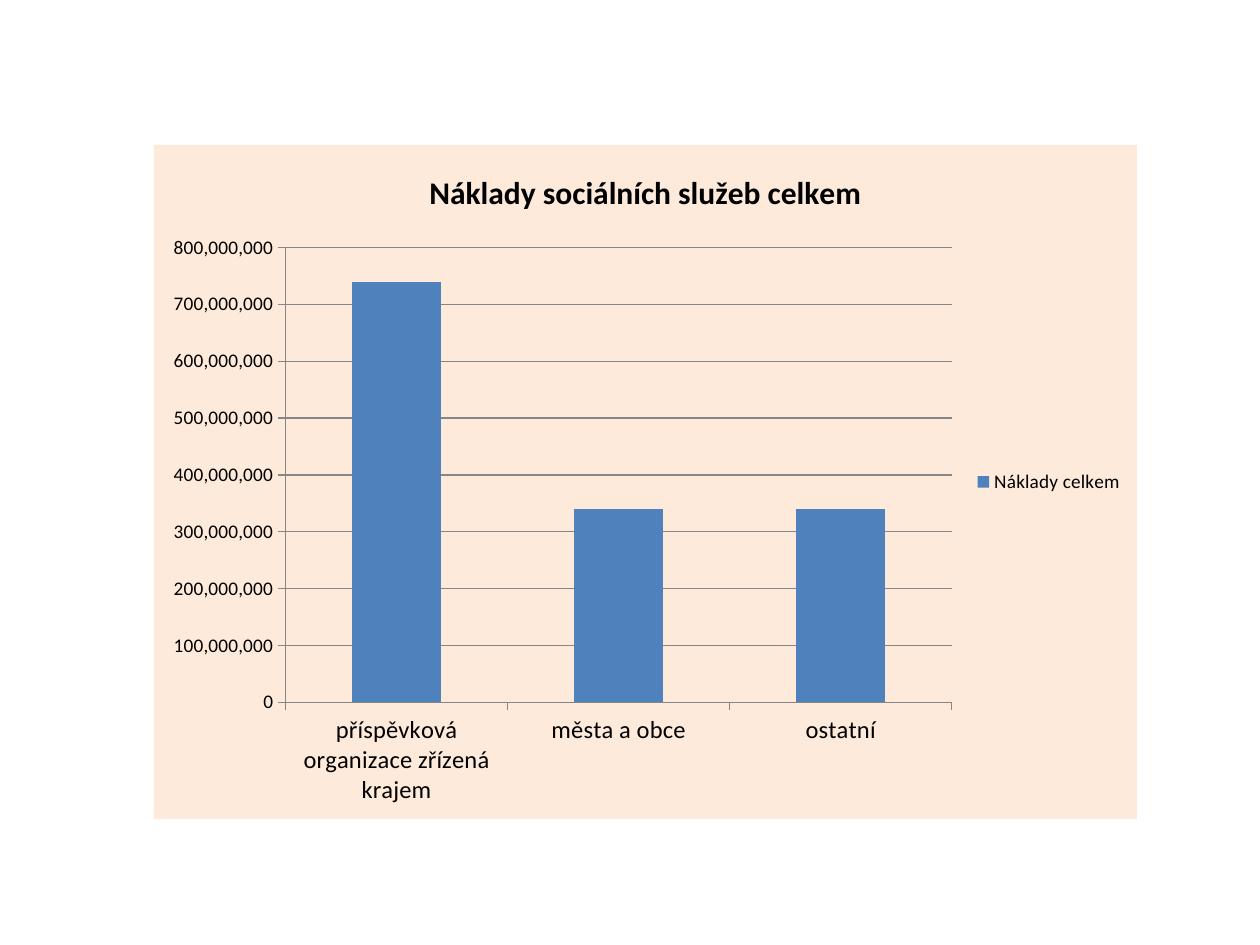
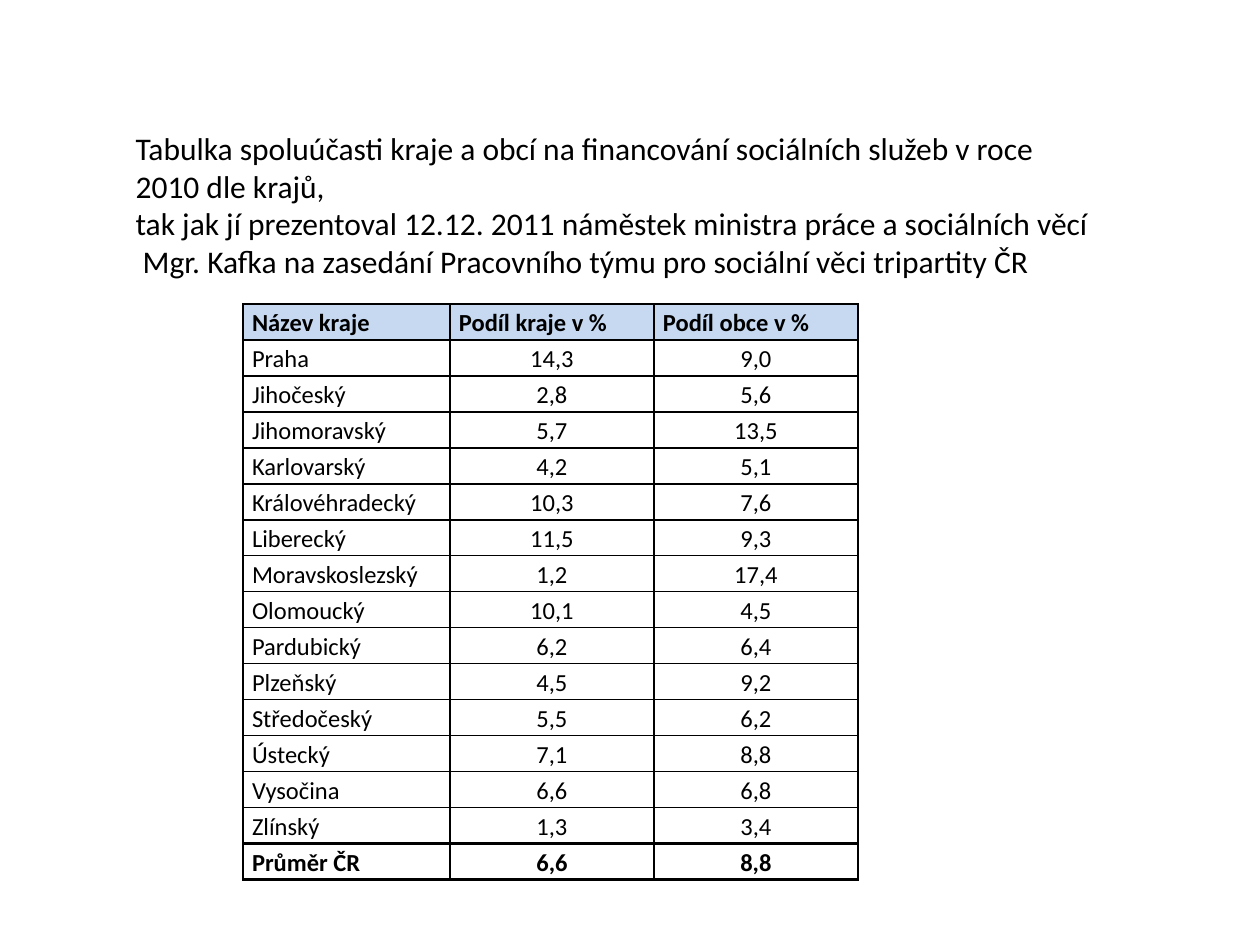
from lxml.etree import SubElement
from pptx import Presentation
from pptx.chart.data import CategoryChartData
from pptx.dml.color import RGBColor
from pptx.enum.chart import XL_CHART_TYPE as ChartType, XL_LEGEND_POSITION as LegendPosition
from pptx.enum.chart import XL_TICK_MARK as TickMark
from pptx.enum.text import MSO_ANCHOR as Anchor, MSO_AUTO_SIZE as AutoSize, PP_ALIGN as Align
from pptx.oxml import parse_xml
from pptx.oxml.ns import nsdecls, qn
from pptx.util import Pt

PX = 914400 / 126
FONT = "Calibri"
COLORS = {
    "text": "000000",
    "chart_area": "FDEADA",
    "bar": "4F81BD",
    "grid": "868686",
    "header": "C6D9F1",
    "border": "000000",
}
TITLE_ONLY, BLANK = 5, 6

COSTS = {
    "příspěvková organizace zřízená krajem": 740000000,
    "města a obce": 340000000,
    "ostatní": 340000000,
}
INTRO = [
    "Tabulka spoluúčasti kraje a obcí na financování sociálních služeb v roce 2010 dle krajů,",
    "tak jak jí prezentoval 12.12. 2011 náměstek ministra práce a sociálních věcí",
    " Mgr. Kafka na zasedání Pracovního týmu pro sociální věci tripartity ČR",
]
SHARES = [
    ("Název kraje", "Podíl kraje v %", "Podíl obce v %"),
    ("Praha", "14,3", "9,0"),
    ("Jihočeský", "2,8", "5,6"),
    ("Jihomoravský", "5,7", "13,5"),
    ("Karlovarský", "4,2", "5,1"),
    ("Královéhradecký", "10,3", "7,6"),
    ("Liberecký", "11,5", "9,3"),
    ("Moravskoslezský", "1,2", "17,4"),
    ("Olomoucký", "10,1", "4,5"),
    ("Pardubický", "6,2", "6,4"),
    ("Plzeňský", "4,5", "9,2"),
    ("Středočeský", "5,5", "6,2"),
    ("Ústecký", "7,1", "8,8"),
    ("Vysočina", "6,6", "6,8"),
    ("Zlínský", "1,3", "3,4"),
    ("Průměr ČR", "6,6", "8,8"),
]


def px(length):
    return round(length * PX)


def rgb(name):
    return RGBColor.from_string(COLORS[name])


def set_font(font, size, bold=False):
    font.name = FONT
    font.size = Pt(size)
    font.bold = bold
    font.color.rgb = rgb("text")


def fill_chart_area(chart):
    properties = parse_xml(
        f'<c:spPr {nsdecls("c", "a")}><a:solidFill><a:srgbClr val="{COLORS["chart_area"]}"/>'
        "</a:solidFill><a:ln><a:noFill/></a:ln></c:spPr>"
    )
    chart.element.find(qn("c:chart")).addnext(properties)


def style_axis(axis, size):
    axis.major_tick_mark = TickMark.OUTSIDE
    axis.minor_tick_mark = TickMark.NONE
    axis.format.line.color.rgb = rgb("grid")
    set_font(axis.tick_labels.font, size)


def add_cost_chart(page, left, top, width, height):
    data = CategoryChartData(number_format="#,##0")
    data.categories = list(COSTS)
    data.add_series("Náklady celkem", list(COSTS.values()))
    frame = page.shapes.add_chart(
        ChartType.COLUMN_CLUSTERED, px(left), px(top), px(width), px(height), data
    )
    chart = frame.chart
    set_font(chart.font, 10)
    fill_chart_area(chart)

    chart.has_title = True
    title = chart.chart_title.text_frame
    title.text = "Náklady sociálních služeb celkem"
    set_font(title.paragraphs[0].font, 18, bold=True)
    chart.chart_title.include_in_layout = False

    chart.has_legend = True
    chart.legend.position = LegendPosition.RIGHT
    chart.legend.include_in_layout = False
    set_font(chart.legend.font, 11)

    style_axis(chart.category_axis, 14)
    values = chart.value_axis
    style_axis(values, 11)
    values.has_major_gridlines = True
    values.major_gridlines.format.line.color.rgb = rgb("grid")
    values.tick_labels.number_format = "#,##0"
    values.tick_labels.number_format_is_linked = False

    plot = chart.plots[0]
    plot.gap_width = 150
    plot.vary_by_categories = False
    bars = plot.series[0].format.fill
    bars.solid()
    bars.fore_color.rgb = rgb("bar")


def place_title(page, lines, left, top, width, height):
    title = page.shapes.title
    title.left, title.top = px(left), px(top)
    title.width, title.height = px(width), px(height)
    frame = title.text_frame
    frame.text = "\n".join(lines)
    frame.word_wrap = True
    frame.auto_size = AutoSize.NONE
    frame.vertical_anchor = Anchor.MIDDLE
    for para in frame.paragraphs:
        para.alignment = Align.LEFT
        set_font(para.font, 18)


def set_border(cell, side, width):
    properties = cell._tc.get_or_add_tcPr()
    line = SubElement(properties, qn(f"a:ln{side}"), w=str(Pt(width)))
    fill = SubElement(line, qn("a:solidFill"))
    SubElement(fill, qn("a:srgbClr"), val=COLORS["border"])


def style_cell(cell, text, bold, centred, filled, widths):
    cell.margin_left = cell.margin_right = px(9)
    cell.margin_top = cell.margin_bottom = 0
    cell.text = text
    para = cell.text_frame.paragraphs[0]
    para.line_spacing = 1.15
    para.alignment = Align.CENTER if centred else Align.LEFT
    set_font(para.font, 14, bold)
    for side, width in widths.items():
        set_border(cell, side, width)
    if filled:
        cell.fill.solid()
        cell.fill.fore_color.rgb = rgb("header")
    else:
        cell.fill.background()


def add_share_table(page, left, top, column_widths, row_height):
    last = len(SHARES) - 1
    frame = page.shapes.add_table(
        len(SHARES), len(column_widths), px(left), px(top),
        px(sum(column_widths)), px(row_height * len(SHARES)),
    )
    table = frame.table
    table.first_row = table.horz_banding = False
    for column, width in zip(table.columns, column_widths):
        column.width = px(width)
    for row_index, values in enumerate(SHARES):
        table.rows[row_index].height = px(row_height)
        header, average = row_index == 0, row_index == last
        side_width = 1.5 if average else 1
        bottom_width = 1.5 if row_index >= last - 1 else 1
        widths = {"L": side_width, "R": side_width, "T": side_width, "B": bottom_width}
        for column_index, text in enumerate(values):
            style_cell(
                table.cell(row_index, column_index), text, bold=header or average,
                centred=column_index > 0 and not header, filled=header, widths=widths,
            )


def main():
    deck = Presentation()
    deck.slide_width, deck.slide_height = px(1260), px(945)

    chart_page = deck.slides.add_slide(deck.slide_layouts[BLANK])
    add_cost_chart(chart_page, 154, 145, 983, 674)

    table_page = deck.slides.add_slide(deck.slide_layouts[TITLE_ONLY])
    place_title(table_page, INTRO, 123, 66, 992, 277)
    add_share_table(table_page, 243, 304, [207, 204, 204], 36)

    deck.save("out.pptx")


if __name__ == "__main__":
    main()
